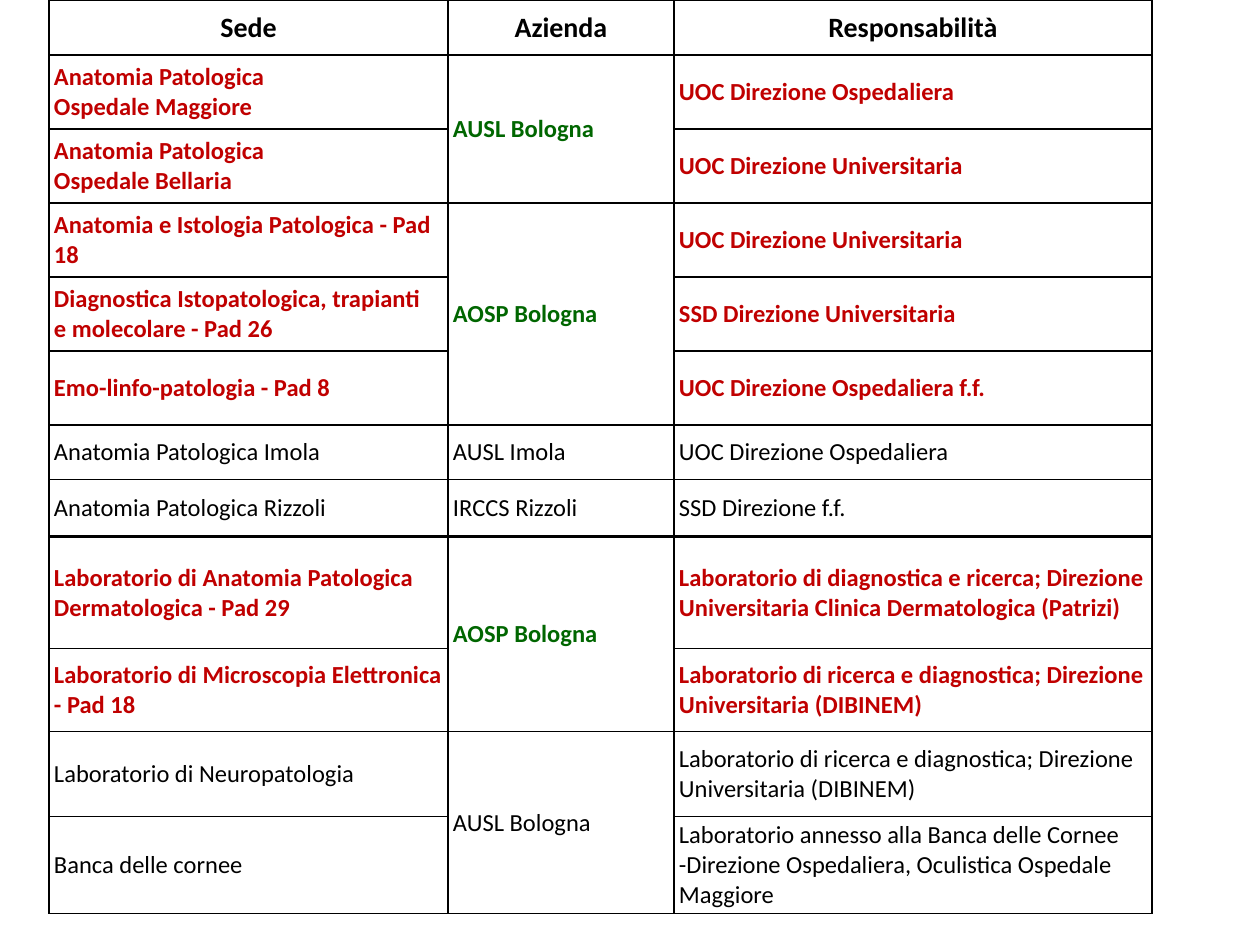
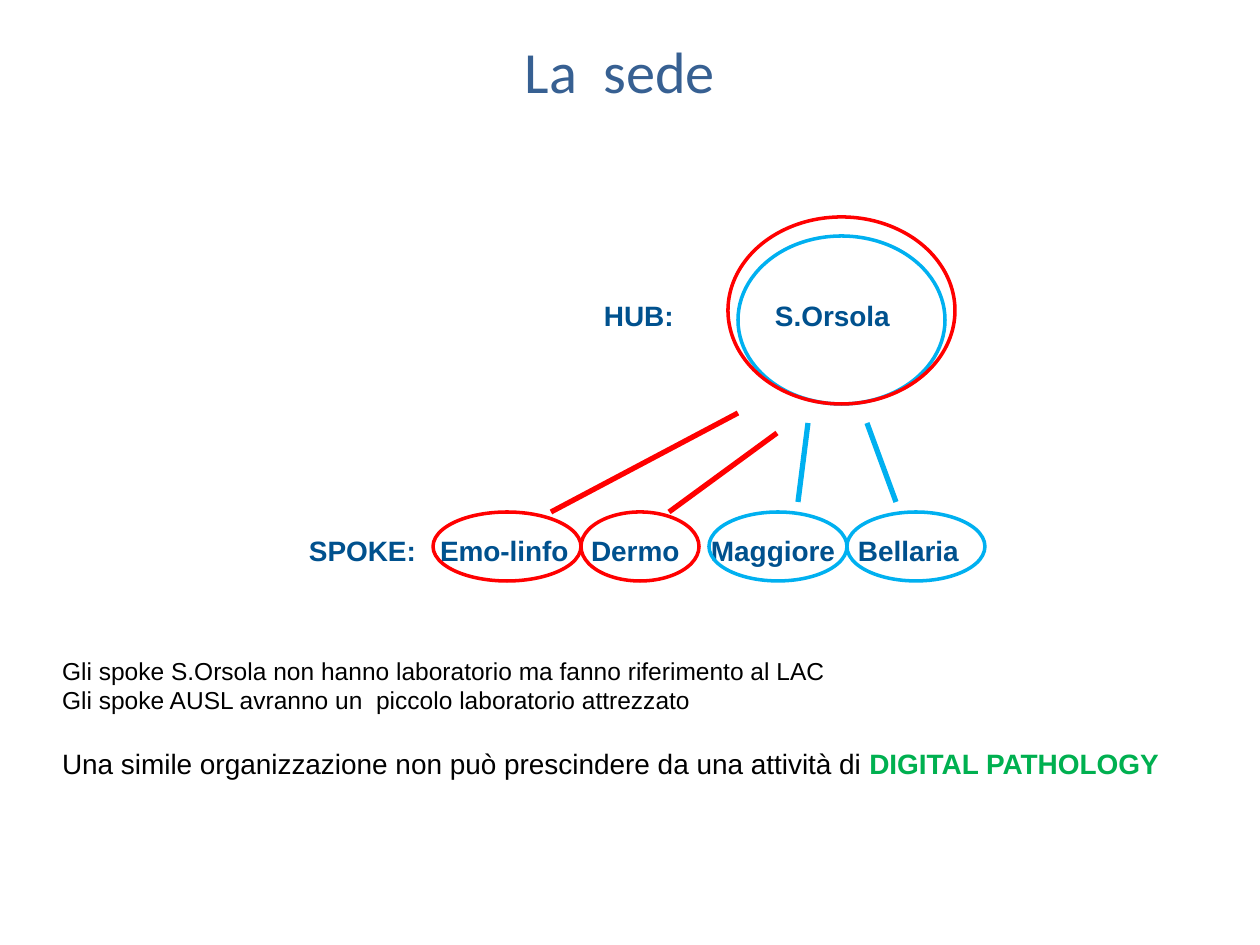
from dataclasses import dataclass

from lxml import etree
from pptx import Presentation
from pptx import util as u
from pptx.dml.color import RGBColor
from pptx.enum import shapes, text
from pptx.oxml import ns

PX = 914400 / 126  # EMU in one px


@dataclass(frozen=True)
class Theme:
    black: str = "000000"
    crimson: str = "C00000"
    dark_green: str = "006600"
    title_blue: str = "376092"
    label_blue: str = "00518E"
    cyan: str = "00B0F0"
    red: str = "FF0000"
    green: str = "00B050"
    table_font: str = "Calibri"
    body_font: str = "Arial"
    title_size: float = 33.3
    large: int = 16
    small: int = 14


theme = Theme()


def emu(*lengths):
    return [round(length * PX) for length in lengths]


def add_span(para, words, color, **looks):
    para.add_run().text = words
    span = para.runs[-1]
    span.font.color.rgb = RGBColor.from_string(color)
    for name, value in looks.items():
        setattr(span.font, name, value)


deck = Presentation()
deck.slide_width, deck.slide_height = emu(1260, 945)
blank = deck.slide_layouts[6]

# Slide 1: sites, trusts and who is in charge
# Height, site, trust (None continues the cell above), responsibility, highlighted
rows = [
    (55, "Sede", "Azienda", "Responsabilità", True),
    (74, "Anatomia Patologica \vOspedale Maggiore", "AUSL Bologna",
     "UOC Direzione Ospedaliera", True),
    (74, "Anatomia Patologica\vOspedale Bellaria", None,
     "UOC Direzione Universitaria", True),
    (74, "Anatomia e Istologia Patologica - Pad 18", "AOSP Bologna",
     "UOC Direzione Universitaria", True),
    (74, "Diagnostica Istopatologica, trapianti  e molecolare - Pad 26", None,
     "SSD Direzione Universitaria", True),
    (74, "Emo-linfo-patologia - Pad 8", None,
     "UOC Direzione Ospedaliera f.f.", True),
    (55, "Anatomia Patologica Imola", "AUSL Imola",
     "UOC Direzione Ospedaliera", False),
    (57, "Anatomia Patologica Rizzoli", "IRCCS Rizzoli",
     "SSD Direzione f.f.", False),
    (112, "Laboratorio di Anatomia Patologica Dermatologica - Pad 29", "AOSP Bologna",
     "Laboratorio di diagnostica e ricerca; Direzione Universitaria Clinica "
     "Dermatologica (Patrizi)", True),
    (83, "Laboratorio di Microscopia Elettronica - Pad 18", None,
     "Laboratorio di ricerca e diagnostica; Direzione Universitaria (DIBINEM)", True),
    (85, "Laboratorio di Neuropatologia", "AUSL Bologna",
     "Laboratorio di ricerca e diagnostica; Direzione Universitaria (DIBINEM)", False),
    (97, "Banca delle cornee", None,
     "Laboratorio annesso alla Banca delle Cornee -Direzione Ospedaliera, "
     "Oculistica Ospedale Maggiore", False),
]
columns = [399, 226, 478]
last_hospital_row = 7  # a thick rule below it sets off the laboratories

page = deck.slides.add_slide(blank)
table = page.shapes.add_table(
    len(rows), len(columns),
    *emu(49, 0, sum(columns), sum(row[0] for row in rows))).table
table.first_row = table.horz_banding = False
for column, width in zip(table.columns, columns):
    column.width = emu(width)[0]

cell_format = dict(zip(("margin_left", "margin_right", "margin_top", "margin_bottom"),
                       emu(5, 5, 0, 0)),
                   vertical_anchor=text.MSO_ANCHOR.MIDDLE)

for row_index, (height, *entries, highlighted) in enumerate(rows):
    table.rows[row_index].height = emu(height)[0]
    header = row_index == 0
    for column_index, words in enumerate(entries):
        cell = table.cell(row_index, column_index)
        for name, value in cell_format.items():
            setattr(cell, name, value)
        cell.fill.background()

        # Borders go ahead of the fill
        thick_side = {last_hospital_row: "lnB", last_hospital_row + 1: "lnT"}.get(row_index)
        properties = cell._tc.get_or_add_tcPr()
        for position, side in enumerate(("lnL", "lnR", "lnT", "lnB")):
            points = 2.25 if side == thick_side else 1
            border = etree.Element(ns.qn(f"a:{side}"), w=str(u.Pt(points)))
            fill = etree.SubElement(border, ns.qn("a:solidFill"))
            etree.SubElement(fill, ns.qn("a:srgbClr"), val=theme.black)
            properties.insert(position, border)

        if words is None:
            continue
        para = cell.text_frame.paragraphs[0]
        if header:
            para.alignment = text.PP_ALIGN.CENTER
        color = theme.black
        if highlighted and not header:
            color = theme.dark_green if column_index == 1 else theme.crimson
        for line_index, line in enumerate(words.split("\v")):
            if line_index:
                para.add_line_break()
            add_span(para, line, color, name=theme.table_font, bold=highlighted,
                     size=u.Pt(theme.large if header else theme.small))

# Join each trust with the empty cells below it
for row_index, row in enumerate(rows):
    end = row_index
    while end + 1 < len(rows) and rows[end + 1][2] is None:
        end += 1
    if row[2] and end > row_index:
        table.cell(row_index, 1).merge(table.cell(end, 1))

# Slide 2: hub and spokes
page = deck.slides.add_slide(blank)
label_look = dict(name=theme.body_font, size=u.Pt(theme.large), bold=True)
title_look = dict(name=theme.table_font, size=u.Pt(theme.title_size))
small_look = dict(name=theme.body_font, size=u.Pt(theme.small))
large_look = dict(name=theme.body_font, size=u.Pt(theme.large))
left, center = text.PP_ALIGN.LEFT, text.PP_ALIGN.CENTER

# Each text: place, alignment, paragraphs made of (words, colour, look)
hub_top, spoke_top = 299, 534
labels = [("HUB:", 604, hub_top, 74), ("S.Orsola", 775, hub_top, 118),
          ("SPOKE:", 309, spoke_top, 112), ("Emo-linfo", 440, spoke_top, 132),
          ("Dermo", 591, spoke_top, 92), ("Maggiore", 711, spoke_top, 128),
          ("Bellaria", 858, spoke_top, 105)]
texts = [((x, y, width, 32), left, [[(words, theme.label_blue, label_look)]])
         for words, x, y, width in labels]
texts += [
    ((246, 35, 748, 71), center, [[("La  sede", theme.title_blue, title_look)]]),
    ((62, 656, 1128, 120), left, [
        [("Gli spoke S.Orsola non hanno laboratorio ma fanno riferimento al LAC",
          theme.black, small_look)],
        [("Gli spoke AUSL avranno un  piccolo laboratorio attrezzato",
          theme.black, small_look)],
        [("Una simile organizzazione non può prescindere da una attività di ",
          theme.black, large_look),
         ("DIGITAL PATHOLOGY", theme.green, label_look)],
    ]),
]
for place, alignment, paragraphs in texts:
    frame = page.shapes.add_textbox(*emu(*place)).text_frame
    frame.word_wrap = True
    for side in ("left", "right", "top", "bottom"):
        setattr(frame, f"margin_{side}", 0)
    for index, spans in enumerate(paragraphs):
        para = frame.add_paragraph() if index else frame.paragraphs[0]
        para.alignment = alignment
        for words, color, look in spans:
            add_span(para, words, color, **look)
    if len(paragraphs) > 1:
        para.space_before = u.Pt(18)  # sets off the conclusion

# Two networks: ovals (left, top, width, height) and links (x1, y1, x2, y2)
networks = [
    (theme.cyan,
     [(709, 512, 138, 69), (847, 512, 138, 69), (738, 236, 207, 168)],
     [(808, 423, 798, 502), (867, 423, 896, 502)]),
    (theme.red,
     [(728, 217, 227, 187), (433, 512, 148, 69), (581, 512, 118, 69)],
     [(738, 413, 551, 512), (777, 433, 669, 512)]),
]
for color, ovals, links in networks:
    for place in ovals:
        oval = page.shapes.add_shape(shapes.MSO_SHAPE.OVAL, *emu(*place))
        oval.shadow.inherit = False
        oval.fill.background()
        oval.line.color.rgb = RGBColor.from_string(color)
        oval.line.width = u.Pt(2)
    for ends in links:
        link = page.shapes.add_connector(shapes.MSO_CONNECTOR.STRAIGHT, *emu(*ends))
        link.line.color.rgb = RGBColor.from_string(color)
        link.line.width = u.Pt(3)
        etree.SubElement(link._element.spPr, ns.qn("a:effectLst"))

deck.save("out.pptx")
